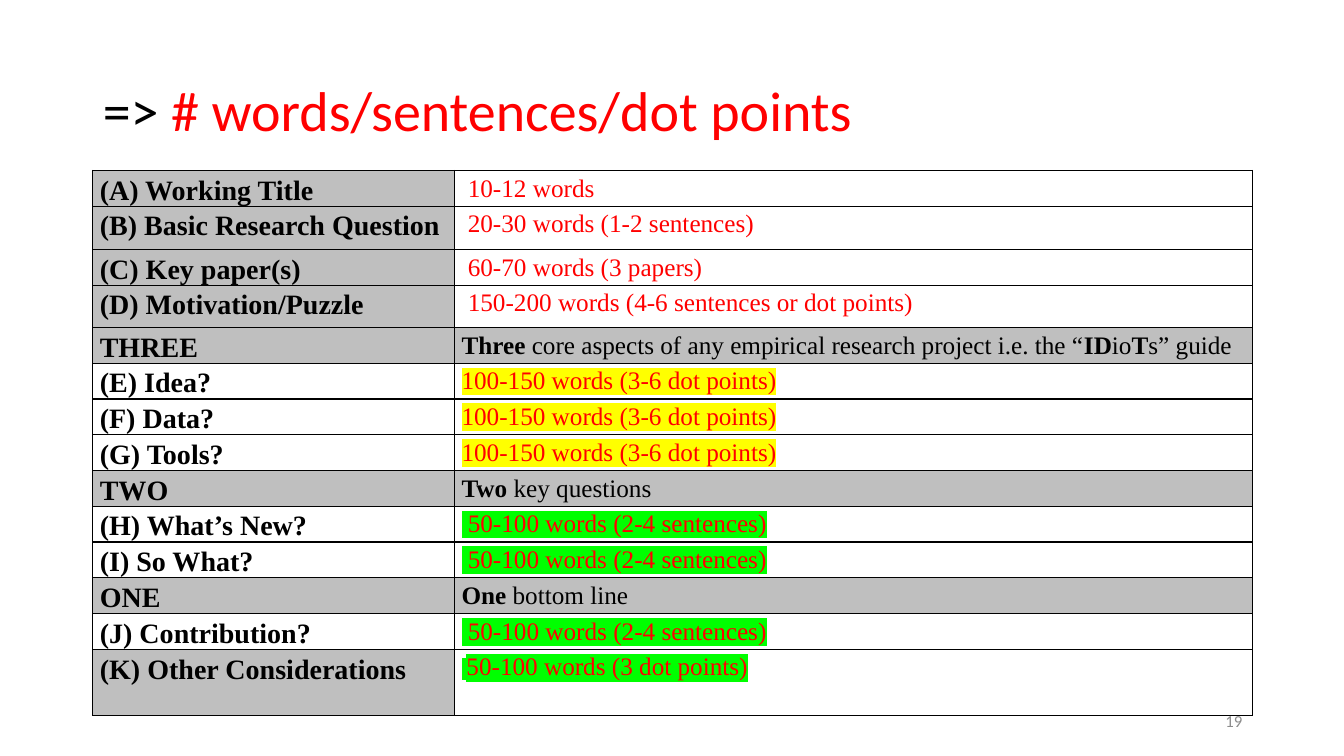
from lxml.etree import SubElement
from pptx import Presentation
from pptx.dml.color import RGBColor
from pptx.enum.text import MSO_ANCHOR, PP_ALIGN
from pptx.oxml import parse_xml
from pptx.oxml.ns import nsdecls, qn
from pptx.util import Inches, Pt

COLORS = {"black": "000000", "red": "FF0000", "band": "BFBFBF", "white": "FFFFFF",
          "yellow": "FFFF00", "green": "00FF00", "number": "8C8C8C"}
HEADING_FONT, TABLE_FONT = "Calibri", "Times New Roman"
WIDTH, HEIGHT = 13.33, 7.5
MARGIN, CONTENT_WIDTH = 0.92, 11.5
LABEL_SHARE = 0.312
ROW_HEIGHT = 0.32
TALL_ROWS = {1: 0.43, 3: 0.42, 13: 0.66}

# Label, label shaded, kind of guide, guide text (asterisks enclose bold words)
ROWS = [
    ("(A) Working Title", True, "plain", " 10-12 words"),
    ("(B) Basic Research Question", True, "plain", " 20-30 words (1-2 sentences)"),
    ("(C) Key paper(s)", True, "plain", " 60-70 words (3 papers)"),
    ("(D) Motivation/Puzzle", True, "plain", " 150-200 words (4-6 sentences or dot points)"),
    ("THREE", True, "section",
     "*Three* core aspects of any empirical research project i.e. the “*ID*io*T*s” guide"),
    ("(E) Idea?", False, "yellow", "100-150 words (3-6 dot points)"),
    ("(F) Data?", False, "yellow", "100-150 words (3-6 dot points)"),
    ("(G) Tools?", False, "yellow", "100-150 words (3-6 dot points)"),
    ("TWO", True, "section", "*Two* key questions"),
    ("(H) What’s New?", False, "green", " 50-100 words (2-4 sentences)"),
    ("(I) So What?", False, "green", " 50-100 words (2-4 sentences)"),
    ("ONE", True, "section", "*One* bottom line"),
    ("(J) Contribution?", False, "green", " 50-100 words (2-4 sentences)"),
    ("(K) Other Considerations", True, "green", " 50-100 words (3 dot points)"),
]


def add_span(para, text, size, color, font, bold=False, highlight=None):
    span = para.add_run()
    span.text = text
    span.font.size = Pt(size)
    span.font.name = font
    span.font.bold = bold
    span.font.color.rgb = RGBColor.from_string(COLORS[color])
    if highlight:
        fill = span.font.fill._xPr.find(qn("a:solidFill"))
        fill.addnext(parse_xml(f'<a:highlight {nsdecls("a")}>'
                               f'<a:srgbClr val="{COLORS[highlight]}"/></a:highlight>'))


def format_cell(cell, color):
    """Set the fill, insets, paragraph spacing and thin black borders."""
    cell.fill.solid()
    cell.fill.fore_color.rgb = RGBColor.from_string(COLORS[color])
    cell.margin_left = cell.margin_right = Inches(0.07)
    cell.margin_top = cell.margin_bottom = 0
    para = cell.text_frame.paragraphs[0]
    para.line_spacing = 1.15
    para.space_after = Pt(10)
    properties = cell._tc.get_or_add_tcPr()
    for position, side in enumerate(("lnL", "lnR", "lnT", "lnB")):
        border = SubElement(properties, qn(f"a:{side}"), w=str(Pt(1)))
        fill = SubElement(border, qn("a:solidFill"))
        SubElement(fill, qn("a:srgbClr"), val=COLORS["black"])
        properties.insert(position, border)
    return para


def add_guide(para, kind, text, last):
    if kind == "section":
        for index, part in enumerate(text.split("*")):
            if part:
                add_span(para, part, 18, "black", TABLE_FONT, bold=index % 2 == 1)
        return
    highlight = None if kind == "plain" else kind
    if last:  # the closing row opens with a smaller space
        add_span(para, text[0], 14, "red", TABLE_FONT, highlight=highlight)
        text = text[1:]
    add_span(para, text, 18, "red", TABLE_FONT, highlight=highlight)


def place_title(page, left, top, width, height):
    title = page.shapes.title
    title.left, title.top, title.width, title.height = map(Inches, (left, top, width, height))
    frame = title.text_frame
    frame.word_wrap = True
    frame.vertical_anchor = MSO_ANCHOR.MIDDLE
    para = frame.paragraphs[0]
    para.alignment = PP_ALIGN.LEFT
    para.line_spacing = 0.9
    add_span(para, "=> ", 40, "black", HEADING_FONT)
    add_span(para, "# words/sentences/dot points", 40, "red", HEADING_FONT)


def place_table(page, left, top, width):
    heights = [TALL_ROWS.get(index, ROW_HEIGHT) for index in range(len(ROWS))]
    table = page.shapes.add_table(len(ROWS), 2, Inches(left), Inches(top),
                                  Inches(width), Inches(sum(heights))).table
    table.first_row = table.horz_banding = False
    table.columns[0].width = Inches(width * LABEL_SHARE)
    table.columns[1].width = Inches(width * (1 - LABEL_SHARE))
    for index, (label, shaded, kind, text) in enumerate(ROWS):
        table.rows[index].height = Inches(heights[index])
        para = format_cell(table.cell(index, 0), "band" if shaded else "white")
        add_span(para, label, 20, "black", TABLE_FONT, bold=True)
        para = format_cell(table.cell(index, 1), "band" if kind == "section" else "white")
        add_guide(para, kind, text, index == len(ROWS) - 1)


def place_number(page, left, top, width, height):
    box = page.shapes.add_textbox(*map(Inches, (left, top, width, height)))
    frame = box.text_frame
    frame.word_wrap = True
    frame.vertical_anchor = MSO_ANCHOR.MIDDLE
    para = frame.paragraphs[0]
    para.alignment = PP_ALIGN.RIGHT
    add_span(para, "19", 12, "number", HEADING_FONT)


def main():
    deck = Presentation()
    deck.slide_width, deck.slide_height = Inches(WIDTH), Inches(HEIGHT)
    page = deck.slides.add_slide(deck.slide_layouts[5])
    place_title(page, MARGIN, 0.4, CONTENT_WIDTH, 1.45)
    place_table(page, MARGIN, 1.69, CONTENT_WIDTH)
    place_number(page, MARGIN + CONTENT_WIDTH - 3, 6.95, 3, 0.4)
    deck.save("out.pptx")


if __name__ == "__main__":
    main()
